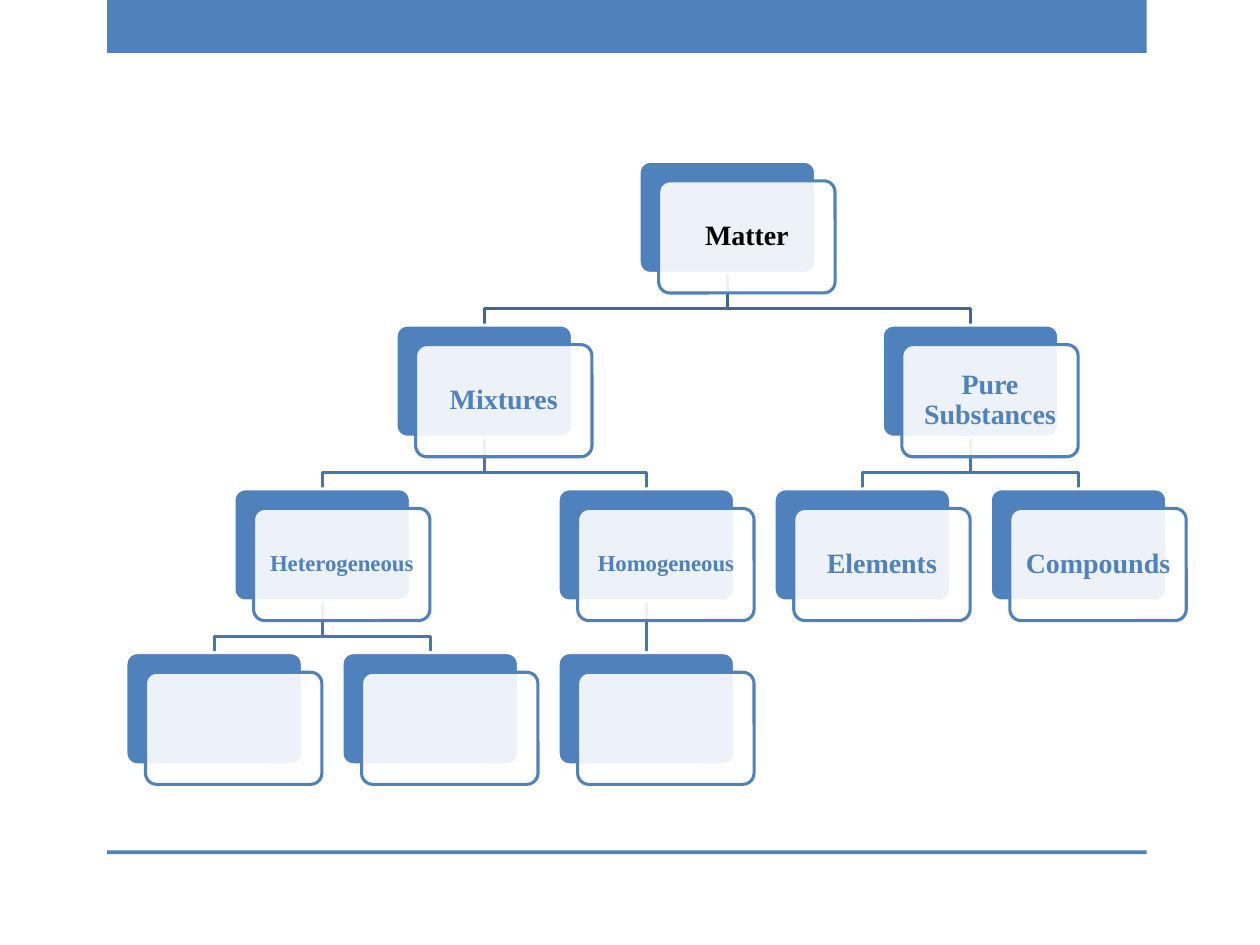
from lxml import etree
from pptx import Presentation
from pptx.dml.color import RGBColor
from pptx.enum.shapes import MSO_CONNECTOR, MSO_SHAPE
from pptx.enum.text import MSO_ANCHOR, PP_ALIGN
from pptx.oxml.ns import qn
from pptx.util import Inches, Pt

BLUE, WHITE, BLACK = "4F81BD", "FFFFFF", "000000"
CARD_W, CARD_H = 1.4, 0.89
LEFT, TOP = 1.0, 1.28
COLUMN_STEP, LEVEL_STEP = 1.715, 1.3
OFFSET = 0.155  # shift of the front card from the back card


def rgb(color):
    return RGBColor.from_string(color)


def write_text(shape, text, size=16, color=BLUE, inset=0.07):
    frame = shape.text_frame
    frame.word_wrap = True
    frame.vertical_anchor = MSO_ANCHOR.MIDDLE
    frame.margin_left = frame.margin_right = Inches(inset)
    frame.margin_top = frame.margin_bottom = Inches(inset)
    paragraph = frame.paragraphs[0]
    paragraph.alignment = PP_ALIGN.CENTER
    paragraph.line_spacing = 0.9
    run = paragraph.add_run()
    run.text = text
    run.font.name = "Times New Roman"
    run.font.size = Pt(size)
    run.font.bold = True
    run.font.color.rgb = rgb(color)


prs = Presentation()
prs.slide_width, prs.slide_height = Inches(10), Inches(7.5)
slide = prs.slides.add_slide(prs.slide_layouts[6])
shapes = slide.shapes

# Header band and footer rule
for band_top, band_height in [(0, 0.42), (6.75, 0.03)]:
    band = shapes.add_shape(MSO_SHAPE.RECTANGLE, Inches(0.85), Inches(band_top),
                            Inches(8.25), Inches(band_height))
    band.shadow.inherit = False
    band.fill.solid()
    band.fill.fore_color.rgb = rgb(BLUE)
    band.line.fill.background()

# Tree of matter: column, level, parent index, label, text format
nodes = [
    (2.375, 0, None, "Matter", {"color": BLACK}),
    (1.25, 1, 0, "Mixtures", {}),
    (0.5, 2, 1, "Heterogeneous", {"size": 13, "inset": 0.05}),
    (0, 3, 2, "", {}),
    (1, 3, 2, "", {}),
    (2, 2, 1, "Homogeneous", {"size": 13, "inset": 0.05}),
    (2, 3, 5, "", {}),
    (3.5, 1, 0, "Pure Substances", {}),
    (3, 2, 7, "Elements", {}),
    (4, 2, 7, "Compounds", {}),
]

# Branches from each parent to its children, behind the cards
for column, level, parent, label, text_format in nodes:
    if parent is None:
        continue
    child_x = Inches(LEFT + column * COLUMN_STEP + CARD_W / 2)
    parent_x = Inches(LEFT + nodes[parent][0] * COLUMN_STEP + CARD_W / 2)
    child_top = TOP + level * LEVEL_STEP
    start_y = Inches(child_top - LEVEL_STEP + CARD_H)
    bend_y, end_y = Inches(child_top - 0.13), Inches(child_top)
    if child_x == parent_x:
        branch = shapes.add_connector(MSO_CONNECTOR.STRAIGHT,
                                      parent_x, start_y, child_x, end_y)
        etree.SubElement(branch._element.spPr, qn("a:effectLst"))
    else:
        builder = shapes.build_freeform(parent_x, start_y)
        builder.add_line_segments(
            [(parent_x, bend_y), (child_x, bend_y), (child_x, end_y)], close=False)
        branch = builder.convert_to_shape()
        branch.shadow.inherit = False
        branch.fill.background()
    branch.line.color.rgb = rgb("3F6797" if level == 1 else "4875AC")
    branch.line.width = Pt(1.75)

# Cards: a solid back card and a translucent front card that holds the label
for column, level, parent, label, text_format in nodes:
    left, top = LEFT + column * COLUMN_STEP, TOP + level * LEVEL_STEP
    for shift, fill, outline in [(0, BLUE, WHITE), (OFFSET, WHITE, BLUE)]:
        card = shapes.add_shape(MSO_SHAPE.ROUNDED_RECTANGLE, Inches(left + shift),
                                Inches(top + shift), Inches(CARD_W), Inches(CARD_H))
        card.adjustments[0] = 0.1
        card.shadow.inherit = False
        card.fill.solid()
        card.fill.fore_color.rgb = rgb(fill)
        card.line.color.rgb = rgb(outline)
        card.line.width = Pt(1.75)
    front_color = card._element.spPr.find(qn("a:solidFill")).find(qn("a:srgbClr"))
    etree.SubElement(front_color, qn("a:alpha"), val="90000")
    if label:
        write_text(card, label, **text_format)

prs.save("out.pptx")
